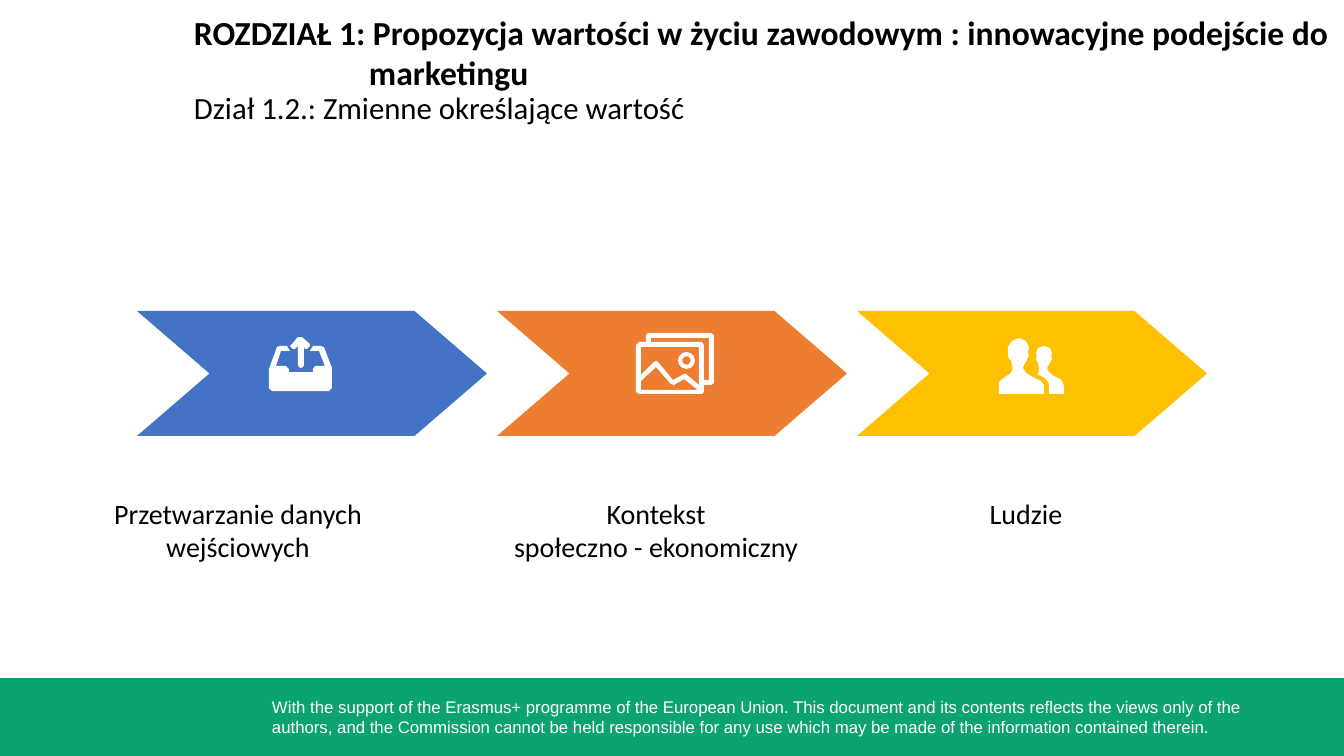
from dataclasses import dataclass

from pptx import Presentation
from pptx import util as u
from pptx.dml.color import RGBColor
from pptx.enum import shapes, text

SCALE = 914400 / 100.8


@dataclass(frozen=True)
class Theme:
    """Colours, fonts and type sizes of the slide."""
    ink: str = "000000"
    paper: str = "FFFFFF"
    band: str = "0CA373"
    arrows: tuple = ("4472C4", "ED7D31", "FFC000")
    font: str = "Calibri"
    footer_font: str = "Arial"
    title: int = 24
    section: int = 22
    label: int = 20
    footer: int = 12


THEME = Theme()

TRAY = [
    [(60, 54), (3, 54), (0, 51), (0, 32), (8, 10), (11, 9), (18, 9), (21, 14),
     (12, 14), (7, 29), (17, 29), (20, 32), (20, 35), (44, 35), (44, 32),
     (46, 29), (56, 29), (50, 14), (41, 14), (44, 9), (52, 9), (55, 10),
     (63, 31), (63, 51)],
    [(38, 12), (36, 12), (35, 9), (35, 28), (34, 30), (32, 31), (30, 30),
     (29, 28), (29, 9), (26, 12), (24, 12), (21, 9), (23, 7), (29, 0),
     (33, 0), (41, 7), (41, 9)],
]
PHOTOS = [
    [(75, 0), (12, 0), (10, 2), (10, 9), (3, 9), (0, 12), (0, 59), (3, 61),
     (66, 61), (68, 59), (68, 52), (75, 52), (78, 50), (78, 2)],
    [(63, 14), (63, 52), (50, 41), (48, 41), (37, 47), (22, 29), (20, 28),
     (18, 29), (5, 42), (5, 14)],
    [(5, 48), (20, 34), (35, 51), (38, 52), (48, 46), (62, 57), (5, 57)],
    [(73, 47), (68, 47), (68, 12), (66, 9), (15, 9), (15, 5), (73, 5)],
]
PEOPLE = [
    [(65, 56), (65, 48), (63, 43), (61, 41), (55, 38), (50, 34), (48, 30),
     (51, 25), (53, 21), (52, 19), (53, 15), (51, 10), (45, 8), (39, 10),
     (37, 15), (38, 19), (37, 21), (39, 25), (40, 30), (40, 34), (38, 36),
     (46, 40), (50, 45), (50, 56)],
    [(34, 39), (27, 35), (24, 30), (25, 27), (28, 22), (30, 17), (29, 15),
     (30, 9), (27, 3), (20, 0), (13, 3), (9, 9), (9, 17), (10, 21), (12, 22),
     (13, 27), (14, 30), (12, 35), (6, 39), (1, 43), (0, 45), (0, 56),
     (45, 56), (45, 47), (42, 43)],
]
STEPS = [
    ("Przetwarzanie danych wejściowych", -68, TRAY, (132, 26)),
    ("Kontekst\nspołeczno - ekonomiczny", -10, PHOTOS, (139, 22)),
    ("Ludzie", 0, PEOPLE, (142, 27)),
]


def px(n):
    """Turn pixels into EMU."""
    return u.Emu(round(n * SCALE))


def paint(sp, color):
    """Give a shape a flat fill without line or shadow."""
    sp.fill.solid()
    sp.fill.fore_color.rgb = RGBColor.from_string(color)
    sp.line.fill.background()
    sp.shadow.inherit = False


def preset(s, kind, box, color, *adjustments):
    """Add a flat preset shape."""
    sp = s.shapes.add_shape(kind, *map(px, box))
    for i, value in enumerate(adjustments):
        sp.adjustments[i] = value
    paint(sp, color)


def setup_frame(tf, insets):
    """Make a wrapping, top-anchored frame with left, top, right, bottom insets."""
    tf.word_wrap = True
    tf.auto_size = text.MSO_AUTO_SIZE.NONE
    tf.vertical_anchor = text.MSO_ANCHOR.TOP
    tf.margin_left, tf.margin_top, tf.margin_right, tf.margin_bottom = map(px, insets)


def write(p, words, size, color=THEME.ink, font=THEME.font, bold=False,
          align=text.PP_ALIGN.LEFT):
    """Write text into a paragraph, one run for each line."""
    p.alignment = align
    for i, line in enumerate(words.split("\n")):
        if i:
            p.add_line_break()
        r = p.add_run()
        r.text = line
        r.font.size = u.Pt(size)
        r.font.name = font
        r.font.bold = bold
        r.font.color.rgb = RGBColor.from_string(color)


def add_text(s, box, insets, words, size, **style):
    """Add a text box with one paragraph."""
    tf = s.shapes.add_textbox(*map(px, box)).text_frame
    setup_frame(tf, insets)
    write(tf.paragraphs[0], words, size, **style)


def add_icon(s, x, y, outlines):
    """Draw closed outlines as one white shape at x, y."""
    start, *rest = outlines[0]
    fb = s.shapes.build_freeform(*start, scale=SCALE)
    fb.add_line_segments(rest, close=True)
    for start, *rest in outlines[1:]:
        fb.move_to(*start)
        fb.add_line_segments(rest, close=True)
    paint(fb.convert_to_shape(px(x), px(y)), THEME.paper)


def add_heading(s, x, y, w, h):
    """Place the chapter title and the section line."""
    sp = s.shapes.title
    sp.left, sp.top, sp.width, sp.height = map(px, (x, y, w, 82))
    tf = sp.text_frame
    setup_frame(tf, (0, 1, 0, 0))
    write(tf.paragraphs[0], "ROZDZIAŁ 1: Propozycja wartości w życiu zawodowym : "
          "innowacyjne podejście do", THEME.title, bold=True)
    p = tf.add_paragraph()
    p.space_before = u.Pt(0)
    p._p.get_or_add_pPr().set("marL", str(px(175)))
    write(p, "marketingu", THEME.title, bold=True)
    add_text(s, (x, y + h - 39, 673, 39), (0, 2, 0, 0),
             "Dział 1.2.: Zmienne określające wartość", THEME.section)


def add_process(s, x, y, w, h):
    """Place three equal arrows with their icons and labels."""
    gap, arrow_h = 10, 125
    arrow_w = (w - 2 * gap) // 3
    for i, (label, shift, icon, (dx, dy)) in enumerate(STEPS):
        left = x + i * (arrow_w + gap)
        preset(s, shapes.MSO_SHAPE.CHEVRON, (left, y, arrow_w, arrow_h),
               THEME.arrows[i], 0.58)
        add_icon(s, left + dx, y + dy, icon)
        if icon is PHOTOS:
            preset(s, shapes.MSO_SHAPE.DONUT, (left + dx + 42, y + dy + 19, 17, 17),
                   THEME.paper, 0.25)
        add_text(s, (left + shift, y + h - 78, 338, 78), (10, 5, 10, 5), label,
                 THEME.label, align=text.PP_ALIGN.CENTER)


def add_footer(s, x, y, w, h):
    """Place the green band with the funding statement."""
    preset(s, shapes.MSO_SHAPE.RECTANGLE, (x, y, w, h), THEME.band)
    add_text(s, (x + 262, y + 14, 1050, 50), (10, 5, 10, 5),
             "With the support of the Erasmus+ programme of the European Union. "
             "This document and its contents reflects the views only of the authors, "
             "and the Commission cannot be held responsible for any use which may be "
             "made of the information contained therein.",
             THEME.footer, color=THEME.paper, font=THEME.footer_font)


def main():
    """Build and save the slide."""
    prs = Presentation()
    prs.slide_width, prs.slide_height = px(1344), px(756)
    s = prs.slides.add_slide(prs.slide_layouts[5])
    add_footer(s, 0, 678, 1344, 78)
    add_heading(s, 194, 11, 1150, 115)
    add_process(s, 137, 311, 1070, 258)
    prs.save("out.pptx")


if __name__ == "__main__":
    main()
